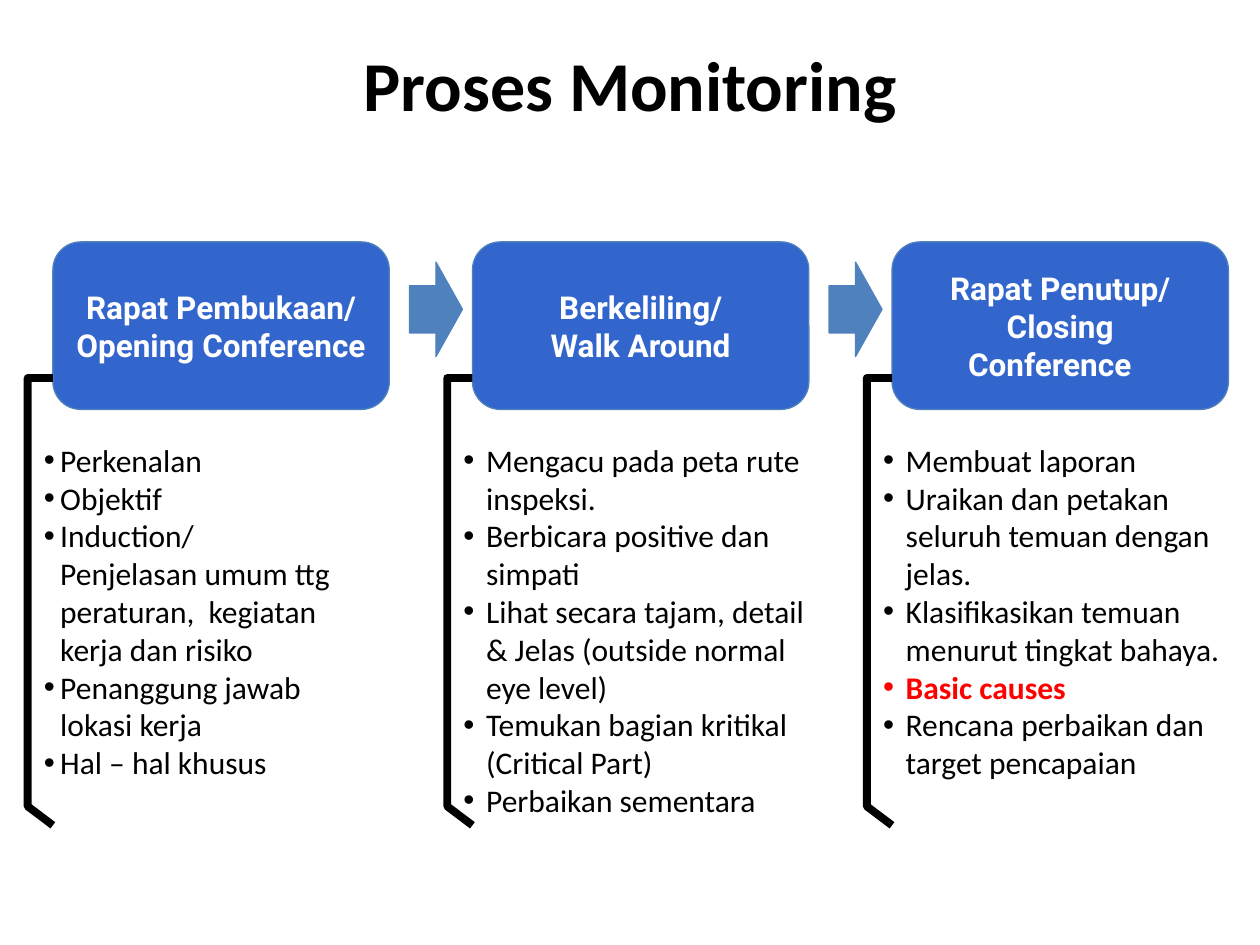
from dataclasses import dataclass

from lxml import etree
from pptx import Presentation
from pptx.dml.color import RGBColor
from pptx.enum import shapes, text
from pptx.oxml.ns import qn
from pptx.util import Inches, Pt


@dataclass(frozen=True)
class Theme:
    """Colours, fonts and type sizes of the slide."""
    ink: RGBColor = RGBColor(0, 0, 0)
    white: RGBColor = RGBColor(255, 255, 255)
    box: RGBColor = RGBColor(0x33, 0x66, 0xCC)
    accent: RGBColor = RGBColor(0x4F, 0x81, 0xBD)
    alert: RGBColor = RGBColor(255, 0, 0)
    body_font: str = "Calibri"
    head_font: str = "Roboto"
    title_size: Pt = Pt(40)
    body_size: Pt = Pt(18)
    thin: Pt = Pt(0.75)
    thick: Pt = Pt(4.5)


@dataclass(frozen=True)
class Stage:
    """One stage of the process; a stepped last heading line is left aligned."""
    heading: tuple
    items: tuple
    list_width: float = 2.92
    hang: float = 0.18
    last_line_indent: float = 0
    alert: str = ""


THEME = Theme()

STAGES = (
    Stage(("Rapat Pembukaan/", "Opening Conference"),
          ("Perkenalan", "Objektif",
           "Induction/ Penjelasan umum ttg peraturan,  kegiatan kerja dan risiko",
           "Penanggung jawab lokasi kerja", "Hal – hal khusus"),
          list_width=2.5, hang=0.13),
    Stage(("Berkeliling/", "Walk Around"),
          ("Mengacu pada peta rute inspeksi.", "Berbicara positive dan simpati",
           "Lihat secara tajam, detail & Jelas (outside normal eye level)",
           "Temukan bagian kritikal (Critical Part)", "Perbaikan sementara")),
    Stage(("Rapat Penutup/", "Closing", "Conference"),
          ("Membuat laporan", "Uraikan dan petakan seluruh temuan dengan jelas.",
           "Klasifikasikan temuan menurut tingkat bahaya.", "Basic causes",
           "Rencana perbaikan dan target pencapaian"),
          last_line_indent=0.44, alert="Basic causes"),
)


def style(p, font, size, color, bold=False):
    """Format every run of a paragraph."""
    for r in p.runs:
        r.font.name, r.font.size, r.font.bold = font, size, bold
        r.font.color.rgb = color


def set_indent(p, left, first=0):
    """Set the left margin and first-line indent in inches."""
    pPr = p._p.get_or_add_pPr()
    pPr.set("marL", str(Inches(left)))
    pPr.set("indent", str(Inches(first)))
    return pPr


def add_bullet(p, hang):
    """Give a paragraph a hanging round bullet."""
    pPr = set_indent(p, hang, -hang)
    etree.SubElement(pPr, qn("a:buFont")).set("typeface", "Arial")
    etree.SubElement(pPr, qn("a:buChar")).set("char", "•")


def add_block(slide, kind, x, y, w, h, fill):
    """Add a filled preset shape with a thin outline."""
    sp = slide.shapes.add_shape(kind, Inches(x), Inches(y), Inches(w), Inches(h))
    sp.shadow.inherit = False
    sp.fill.solid()
    sp.fill.fore_color.rgb = fill
    sp.line.color.rgb = THEME.accent
    sp.line.width = THEME.thin
    return sp


def add_title(slide, x, y, w, h):
    """Place the slide title."""
    tf = slide.shapes.add_textbox(Inches(x), Inches(y), Inches(w), Inches(h)).text_frame
    tf.word_wrap = True
    tf.text = "Proses Monitoring"
    p = tf.paragraphs[0]
    p.alignment = text.PP_ALIGN.CENTER
    style(p, THEME.body_font, THEME.title_size, THEME.ink, True)


def add_heading(slide, stage, x, y, w, h):
    """Place the rounded heading box of a stage."""
    sp = add_block(slide, shapes.MSO_SHAPE.ROUNDED_RECTANGLE, x, y, w, h, THEME.box)
    tf = sp.text_frame
    tf.word_wrap = True
    tf.vertical_anchor = text.MSO_ANCHOR.MIDDLE
    tf.text = "\n".join(stage.heading)
    for p in tf.paragraphs:
        p.alignment = text.PP_ALIGN.CENTER
        style(p, THEME.head_font, THEME.body_size, THEME.white, True)
    if stage.last_line_indent:
        p = tf.paragraphs[-1]
        p.alignment = text.PP_ALIGN.LEFT
        set_indent(p, stage.last_line_indent)


def add_bracket(slide, x, y, w, h):
    """Draw the open bracket that ties a heading to its list."""
    points = [(x, y), (x, y + h - 0.15), (x + w, y + h)]
    builder = slide.shapes.build_freeform(Inches(x + w), Inches(y))
    builder.add_line_segments([(Inches(a), Inches(b)) for a, b in points], close=False)
    sp = builder.convert_to_shape()
    sp.shadow.inherit = False
    sp.fill.background()
    sp.line.color.rgb = THEME.ink
    sp.line.width = THEME.thick


def add_list(slide, stage, x, y, w, h):
    """Place the bulleted list of a stage."""
    tf = slide.shapes.add_textbox(Inches(x), Inches(y), Inches(w), Inches(h)).text_frame
    tf.word_wrap = True
    tf.auto_size = text.MSO_AUTO_SIZE.SHAPE_TO_FIT_TEXT
    tf.text = "\n".join(stage.items)
    for p in tf.paragraphs:
        alert = p.text == stage.alert
        add_bullet(p, stage.hang)
        style(p, THEME.body_font, THEME.body_size,
              THEME.alert if alert else THEME.ink, alert)


def add_stage(slide, stage, x, y, w):
    """Place the heading, bracket and list of one stage in its column."""
    add_heading(slide, stage, x, y, w, 1.33)
    add_bracket(slide, x - 0.2, y + 1.08, 0.2, 3.55)
    add_list(slide, stage, x - 0.17, y + 1.53, stage.list_width, 3.13)


def add_process(slide, x, y, w, pitch):
    """Place all stages in a row with an arrow in each gap."""
    for i, stage in enumerate(STAGES):
        left = x + i * pitch
        add_stage(slide, stage, left, y, w)
        if i < len(STAGES) - 1:
            add_block(slide, shapes.MSO_SHAPE.RIGHT_ARROW,
                      left + w + 0.16, y + 0.16, 0.42, 0.75, THEME.accent)


def main():
    """Build and save the slide."""
    prs = Presentation()
    prs.slide_width, prs.slide_height = Inches(10), Inches(7.5)
    slide = prs.slides.add_slide(prs.slide_layouts[6])
    add_title(slide, 0.5, 0.28, 9, 1.25)
    add_process(slide, 0.42, 1.92, 2.67, 3.33)
    prs.save("out.pptx")


if __name__ == "__main__":
    main()
